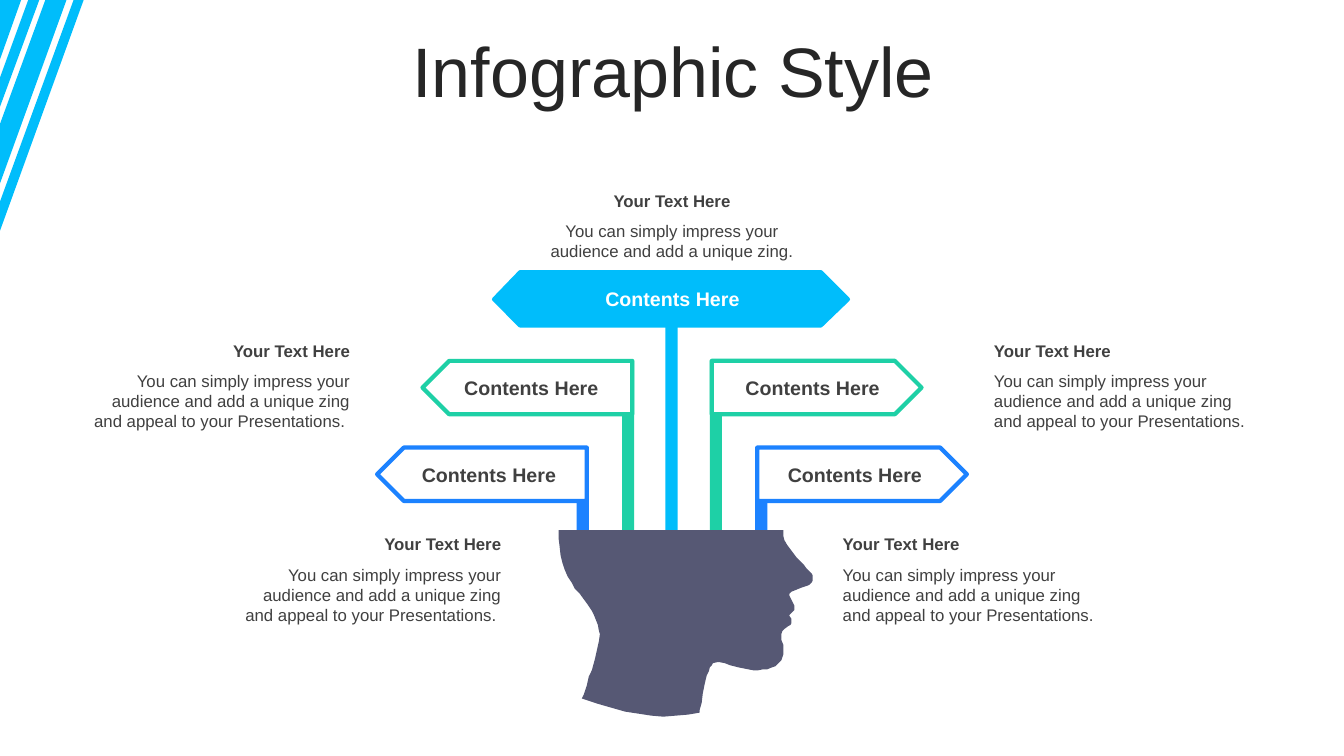
from dataclasses import dataclass

from pptx import Presentation
from pptx.dml.color import RGBColor
from pptx.enum.shapes import MSO_SHAPE
from pptx.enum.text import MSO_ANCHOR, MSO_AUTO_SIZE, PP_ALIGN
from pptx.util import Pt

RECTANGLE, PENTAGON = MSO_SHAPE.RECTANGLE, MSO_SHAPE.PENTAGON
LEFT, CENTER, RIGHT = PP_ALIGN.LEFT, PP_ALIGN.CENTER, PP_ALIGN.RIGHT
MIDDLE, TOP = MSO_ANCHOR.MIDDLE, MSO_ANCHOR.TOP
GROW, FIXED = MSO_AUTO_SIZE.SHAPE_TO_FIT_TEXT, MSO_AUTO_SIZE.NONE

PX = 9144  # EMU per px, 100 px to the inch
SLIDE_WIDTH, SLIDE_HEIGHT = 1333, 750


@dataclass(frozen=True)
class Theme:
    font: str = "Arial"
    sky: str = "00BDFB"
    green: str = "1ED0A6"
    blue: str = "1C82FF"
    head: str = "565874"
    white: str = "FFFFFF"
    title_ink: str = "262626"
    ink: str = "404040"
    title_size: int = 50
    label_size: int = 14
    body_size: int = 12
    outline: int = 3


THEME = Theme()

HEADING = "Your Text Here"
LABEL = "Contents Here"
SHORT_BODY = "You can simply impress your audience and add a unique zing."
LONG_BODY = ("You can simply impress your audience and add a unique zing "
             "and appeal to your Presentations.")

STRIPES = [
    [(73, 0), (83, 0), (0, 229), (0, 200)],
    [(39, 0), (0, 106), (0, 77), (28, 0)],
    [(66, 0), (0, 182), (0, 123), (45, 0)],
    [(0, 0), (21, 0), (0, 59)],
]
BANNER = [(516, 270), (814, 270), (841, 297), (814, 323), (516, 323), (490, 297)]

# Head outline, clockwise from the back of the flat top
HEAD = [
    # Forehead and nose
    (554, 526), (777, 526), (777, 532), (778, 536), (781, 541), (784, 545),
    (790, 553), (797, 560), (800, 564), (802, 566), (805, 569), (806, 571),
    (806, 576), (805, 578), (803, 580), (801, 581), (795, 583), (790, 585),
    # Lips
    (785, 587), (783, 589), (783, 591), (785, 595), (787, 599), (788, 601),
    (788, 605), (787, 606), (783, 610), (783, 611), (785, 614), (785, 618),
    (784, 620), (782, 621), (778, 624), (776, 626), (775, 629), (775, 635),
    # Chin and jaw
    (777, 640), (777, 649), (776, 652), (775, 655), (773, 657), (769, 661),
    (766, 662), (761, 664), (757, 664), (752, 665), (747, 665), (742, 664),
    (732, 662), (724, 660), (719, 658), (714, 657), (711, 657), (707, 658),
    # Neck
    (706, 660), (704, 662), (703, 666), (701, 670), (699, 678), (697, 688),
    (696, 697), (694, 704), (694, 707), (682, 709), (670, 710), (658, 711),
    (646, 710), (633, 708), (620, 706), (606, 702), (592, 698), (577, 693),
    # Nape and back of the head
    (579, 689), (582, 680), (584, 671), (587, 665), (590, 654), (592, 645),
    (594, 636), (595, 629), (594, 626), (593, 620), (591, 615), (589, 610),
    (587, 606), (583, 600), (575, 589), (570, 584), (567, 578), (563, 572),
    (560, 565), (558, 559), (556, 551), (555, 542), (554, 534),
]


def mirror(left, width):
    return SLIDE_WIDTH - left - width


def paint(shape, fill, line=None):
    shape.shadow.inherit = False
    shape.fill.solid()
    shape.fill.fore_color.rgb = RGBColor.from_string(fill)
    if line:
        shape.line.color.rgb = RGBColor.from_string(line)
        shape.line.width = Pt(THEME.outline)
    else:
        shape.line.fill.background()


def add_outline(page, contours, fill, line=None):
    first, *others = contours
    builder = page.shapes.build_freeform(*first[0], scale=PX)
    builder.add_line_segments(first[1:])
    for contour in others:
        builder.move_to(*contour[0])
        builder.add_line_segments(contour[1:])
    paint(builder.convert_to_shape(), fill, line)


def add_preset(page, kind, box, fill, line=None):
    shape = page.shapes.add_shape(kind, *(length * PX for length in box))
    paint(shape, fill, line)
    return shape


def add_text(page, box, text, size, color, align, bold=False, anchor=TOP, fit=GROW):
    frame = page.shapes.add_textbox(*(length * PX for length in box)).text_frame
    frame.word_wrap = True
    frame.auto_size = fit
    frame.vertical_anchor = anchor
    frame.text = text
    para = frame.paragraphs[0]
    para.alignment = align
    font = para.runs[0].font
    font.name, font.size, font.bold = THEME.font, Pt(size), bold
    font.color.rgb = RGBColor.from_string(color)
    return para


def add_caption(page, left, top, body, align):
    size, ink, width = THEME.body_size, THEME.ink, 279
    body_height = 50 if body == SHORT_BODY else 71
    add_text(page, (left, top + 30, width, body_height), body, size, ink, align)
    add_text(page, (left, top, width, 30), HEADING, size, ink, align, bold=True)


def add_label(page, left, top, width, color):
    add_text(page, (left, top, width, 34), LABEL, THEME.label_size, color, CENTER, bold=True)


def add_sign_pair(page, left, top, label_left, color):
    width, label_width = 208, 174
    add_preset(page, PENTAGON, (left, top, width, 53), THEME.white, color)
    left_sign = add_preset(page, PENTAGON, (mirror(left, width), top, width, 53),
                           THEME.white, color)
    left_sign.rotation = 180
    for label_x in (label_left, mirror(label_left, label_width)):
        add_label(page, label_x, top + 10, label_width, THEME.ink)


def main():
    deck = Presentation()
    deck.slide_width, deck.slide_height = SLIDE_WIDTH * PX, SLIDE_HEIGHT * PX
    page = deck.slides.add_slide(deck.slide_layouts[6])

    # Corner stripes and title
    add_outline(page, STRIPES, THEME.sky)
    title = add_text(page, (35, 37, 1266, 79), "Infographic Style", THEME.title_size,
                     THEME.title_ink, CENTER, anchor=MIDDLE, fit=FIXED)
    title.line_spacing = 0.8
    title.space_before = Pt(10)

    # Sign posts rising from the head
    post_width, post_foot = 12, 546
    add_preset(page, RECTANGLE, (660, 322, post_width, post_foot - 322), THEME.sky)
    for left, top, color in ((704, 357, THEME.green), (749, 444, THEME.blue)):
        for post_x in (left, mirror(left, post_width)):
            add_preset(page, RECTANGLE, (post_x, top, post_width, post_foot - top), color)
    add_outline(page, [HEAD], THEME.head)

    # Signs
    add_sign_pair(page, 751, 444, 761, THEME.blue)
    add_sign_pair(page, 706, 358, 719, THEME.green)
    add_outline(page, [BANNER], THEME.sky, THEME.sky)
    add_label(page, 579, 280, 176, THEME.white)

    # Captions
    add_caption(page, 527, 184, SHORT_BODY, CENTER)
    for left, top in ((976, 333), (826, 525)):
        add_caption(page, left, top, LONG_BODY, LEFT)
        add_caption(page, mirror(left, 279), top, LONG_BODY + " ", RIGHT)

    deck.save("out.pptx")


if __name__ == "__main__":
    main()
